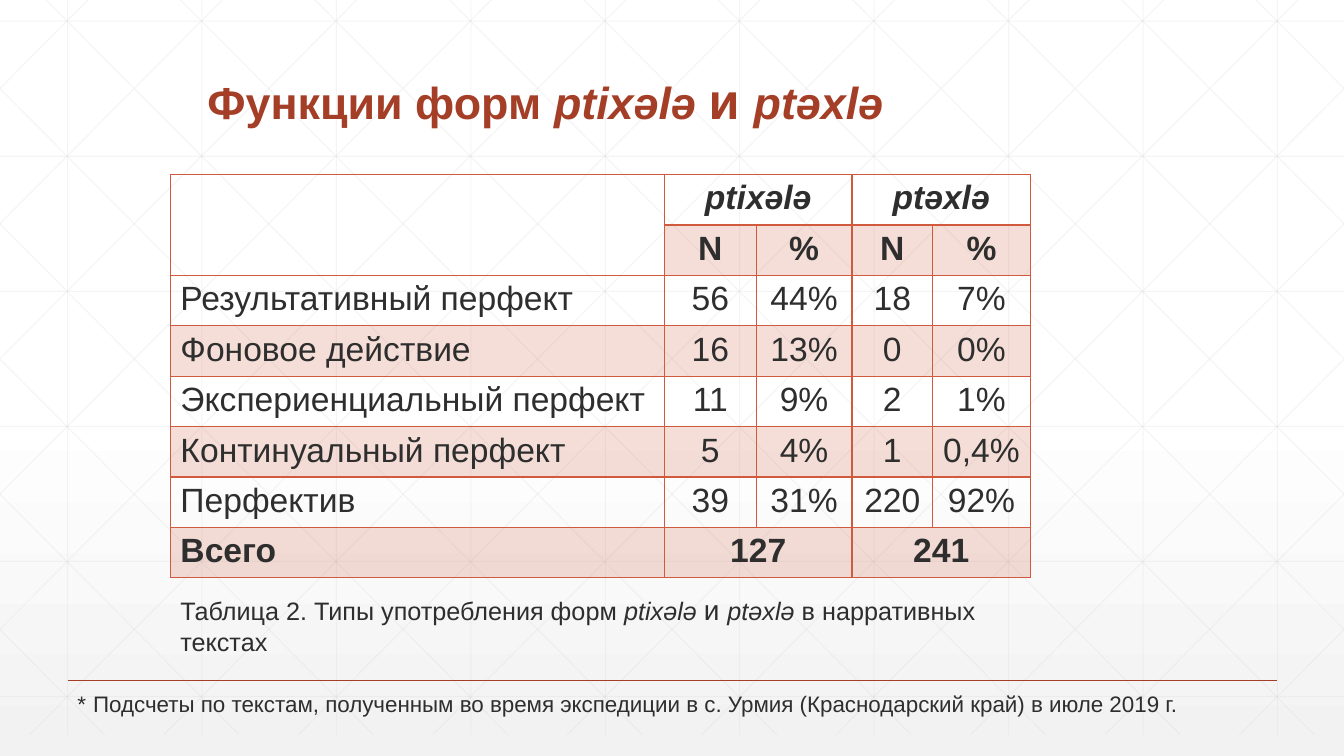
from copy import deepcopy
from dataclasses import dataclass

from lxml import etree
from pptx import Presentation
from pptx.dml.color import RGBColor
from pptx.enum.shapes import MSO_CONNECTOR
from pptx.enum.text import MSO_ANCHOR, PP_ALIGN
from pptx.oxml import parse_xml
from pptx.oxml.ns import nsdecls, qn
from pptx.util import Inches, Pt

STRAIGHT = MSO_CONNECTOR.STRAIGHT
BOTTOM = MSO_ANCHOR.BOTTOM
CENTER = PP_ALIGN.CENTER


@dataclass(frozen=True)
class Theme:
    font: str = "Arial"
    title: str = "A43E27"
    text: str = "2D2E2D"
    border: str = "D15A3E"
    grid: str = "D8D8D8"
    bg_top: str = "FFFFFF"
    bg_bottom: str = "F2F2F2"
    title_size: int = 32
    table_size: int = 24
    caption_size: int = 18
    note_size: int = 16


theme = Theme()
W, H = 13.33, 7.5

prs = Presentation()
prs.slide_width, prs.slide_height = Inches(W), Inches(H)
s = prs.slides.add_slide(prs.slide_layouts[6])


def add_line(x1, y1, x2, y2, color, width, alpha=100):
    line = s.shapes.add_connector(STRAIGHT, Inches(x1), Inches(y1), Inches(x2), Inches(y2))
    line.line.color.rgb = RGBColor.from_string(color)
    line.line.width = Pt(width)
    rgb = line.element.spPr.find(".//" + qn("a:srgbClr"))
    etree.SubElement(rgb, qn("a:alpha"), val=str(alpha * 1000))
    etree.SubElement(line.element.spPr, qn("a:effectLst"))


def add_text(x, y, w, h, runs, color):
    """Add a one-paragraph box; runs are (text, size, italic)."""
    tf = s.shapes.add_textbox(Inches(x), Inches(y), Inches(w), Inches(h)).text_frame
    tf.word_wrap = True
    p = tf.paragraphs[0]
    p.font.name = theme.font
    p.font.color.rgb = RGBColor.from_string(color)
    for text, size, italic in runs:
        r = p.add_run()
        r.text = text
        r.font.size = Pt(size)
        r.font.italic = italic
    return tf


# Background gradient
fill = s.background.fill
fill.gradient()
fill.gradient_angle = 270
stop_list = s.element.find(".//" + qn("a:gsLst"))
stop_list.append(deepcopy(stop_list[-1]))
stops = ((0, theme.bg_top), (0.53, theme.bg_top), (1, theme.bg_bottom))
for stop, (position, color) in zip(fill.gradient_stops, stops):
    stop.position = position
    stop.color.rgb = RGBColor.from_string(color)

# Background grid: verticals, horizontals and mirrored diagonals
GRID_TOP, GRID_BOTTOM, STEP = -0.21, 7.29, 4 / 3
SLOPE = 7.5 / 7.455
grid = [(0.67 + i * STEP, GRID_TOP, 0.67 + i * STEP, GRID_BOTTOM) for i in range(10)]
grid += [(0, 0.21 + i * 1.34, W, 0.21 + i * 1.34) for i in range(6)]
for i in range(-5, 10):
    start = 0.25 + i * STEP
    x1, x2 = max(start, 0), min(start + 7.455, W)
    y1, y2 = (GRID_TOP + (x - start) * SLOPE for x in (x1, x2))
    grid += [(x1, y1, x2, y2), (W - x1, y1, W - x2, y2)]
for ends in grid:
    add_line(*ends, theme.grid, 0.75, alpha=25)

add_line(0.67, 6.75, 12.67, 6.75, theme.title, 1)

# Title
size = theme.title_size
tf = add_text(1.96, 0.09, 10.5, 1.25, [
    ("Функции форм ", size, False), ("ptixələ ", size, True),
    ("и ", 36, False), ("ptəxlə", size, True)], theme.title)
tf.vertical_anchor = BOTTOM
tf.paragraphs[0].font.bold = True
tf.paragraphs[0].line_spacing = 0.9

# Table
rows = [
    ("", "ptixələ", "", "ptəxlə", ""),
    ("", "N", "%", "N", "%"),
    ("Результативный перфект", "56", "44%", "18", "7%"),
    ("Фоновое действие", "16", "13%", "0", "0%"),
    ("Экспериенциальный перфект", "11", "9%", "2", "1%"),
    ("Континуальный перфект", "5", "4%", "1", "0,4%"),
    ("Перфектив", "39", "31%", "220", "92%"),
    ("Всего", "127", "", "241", ""),
]
col_widths = (4.9, 0.91, 0.95, 0.8, 0.97)
last = len(rows) - 1
table = s.shapes.add_table(len(rows), len(col_widths), Inches(1.69), Inches(1.73),
                           Inches(sum(col_widths)), Inches(3.76)).table
table.first_row = table.horz_banding = False
for column, width in zip(table.columns, col_widths):
    column.width = Inches(width)
for i, values in enumerate(rows):
    table.rows[i].height = Inches(0.47)
    for j, value in enumerate(values):
        cell = table.cell(i, j)
        tcPr = cell._tc.get_or_add_tcPr()
        for side in "LRTB":
            thick = j > 0 and (i, side) in ((0, "B"), (1, "T"))
            tcPr.append(parse_xml(
                f'<a:ln{side} {nsdecls("a")} w="{Pt(2 if thick else 1)}"><a:solidFill>'
                f'<a:srgbClr val="{theme.border}"/></a:solidFill></a:ln{side}>'))
        if i % 2 and (i, j) != (1, 0):
            cell.fill.solid()
            cell.fill.fore_color.rgb = RGBColor.from_string(theme.border)
            rgb = tcPr.find(qn("a:solidFill")).find(qn("a:srgbClr"))
            etree.SubElement(rgb, qn("a:alpha"), val="20000")
        else:
            cell.fill.background()
        p = cell.text_frame.paragraphs[0]
        if value:
            p.text = value
        p.font.name = theme.font
        p.font.size = Pt(theme.table_size)
        p.font.color.rgb = RGBColor.from_string(theme.text)
        p.font.bold = i in (0, 1, last)
        p.font.italic = i == 0
        if j:
            p.alignment = CENTER
table.cell(0, 0).merge(table.cell(1, 0))
for i in (0, last):
    for j in (1, 3):
        table.cell(i, j).merge(table.cell(i, j + 1))

# Caption and footnote
size = theme.caption_size
add_text(1.69, 5.83, 8.89, 0.74, [
    ("Таблица 2. Типы употребления форм ", size, False), ("ptixələ ", size, True),
    ("и ", 20, False), ("ptəxlə ", size, True),
    ("в нарративных текстах", size, False)], theme.text)
add_text(0.67, 6.77, 12.01, 0.4, [
    ("*", theme.note_size, False), (" ", theme.caption_size, False),
    ("Подсчеты по текстам, полученным во время экспедиции в с. Урмия "
     "(Краснодарский край) в июле 2019 г.", theme.note_size, False)], theme.text)

prs.save("out.pptx")
